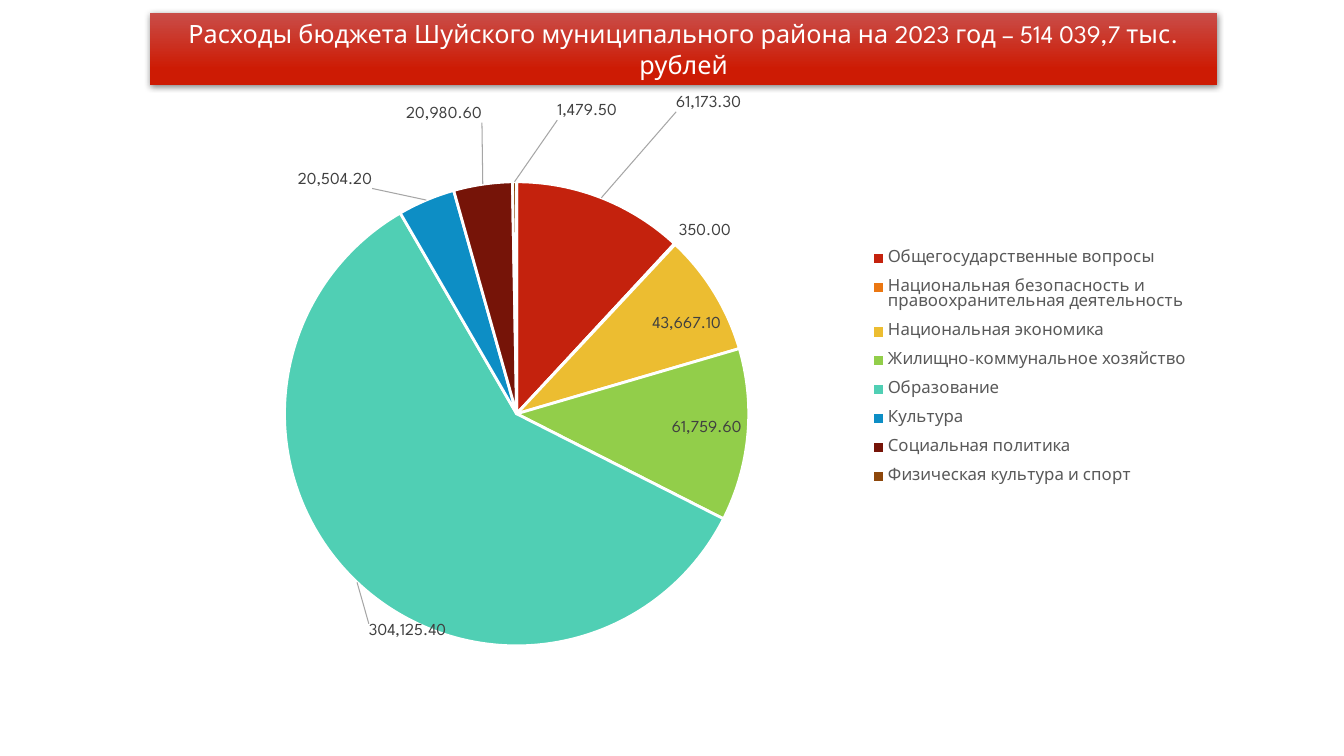
from lxml.etree import SubElement
from pptx import Presentation
from pptx.chart.data import CategoryChartData
from pptx.dml.color import RGBColor
from pptx.enum.chart import XL_CHART_TYPE, XL_LABEL_POSITION, XL_LEGEND_POSITION
from pptx.enum.text import MSO_ANCHOR, PP_ALIGN
from pptx.oxml import parse_xml
from pptx.oxml.ns import nsdecls, qn
from pptx.util import Inches, Pt

FONT = "League Spartan"
WHITE = RGBColor(0xFF, 0xFF, 0xFF)
BANNER_TOP = RGBColor(0xC9, 0x4D, 0x48)
BANNER_BOTTOM = RGBColor(0xCD, 0x1B, 0x04)
LABEL = RGBColor(0x40, 0x40, 0x40)
LEGEND = RGBColor(0x59, 0x59, 0x59)

TITLE = "Расходы бюджета Шуйского муниципального района на 2023 год – 514 039,7 тыс. рублей"
EXPENSES = [
    ("Общегосударственные вопросы", 61173.3, RGBColor(0xC4, 0x22, 0x0D)),
    ("Национальная безопасность и правоохранительная деятельность", 350, RGBColor(0xEB, 0x77, 0x12)),
    ("Национальная экономика", 43667.1, RGBColor(0xEC, 0xBD, 0x31)),
    ("Жилищно-коммунальное хозяйство", 61759.6, RGBColor(0x92, 0xCE, 0x4A)),
    ("Образование", 304125.4, RGBColor(0x50, 0xCF, 0xB4)),
    ("Культура", 20504.2, RGBColor(0x0D, 0x8E, 0xC5)),
    ("Социальная политика", 20980.6, RGBColor(0x76, 0x14, 0x08)),
    ("Физическая культура и спорт", 1479.5, RGBColor(0x8D, 0x47, 0x0B)),
]
LABEL_SHIFTS = {0: (0.07, -0.13), 4: (0.09, 0.06), 5: (-0.05, -0.01), 6: (0, -0.09), 7: (0.07, -0.09)}


def set_font(font, size, color):
    """Apply the slide typeface with a size and a colour."""
    font.name = FONT
    font.size = Pt(size)
    font.color.rgb = color


def manual_layout(**values):
    """Return a chart layout element holding the given settings in order."""
    layout = parse_xml(f"<c:layout {nsdecls('c')}/>")
    manual = SubElement(layout, qn("c:manualLayout"))
    for tag, value in values.items():
        SubElement(manual, qn(f"c:{tag}")).set("val", str(value))
    return layout


def add_banner(s, left, top, width, height):
    """Format the title placeholder as a red gradient banner."""
    sp = s.shapes.title
    sp.left, sp.top, sp.width, sp.height = map(Inches, (left, top, width, height))
    sp.fill.gradient()
    sp.fill.gradient_angle = 270
    stops = sp.fill.gradient_stops
    for stop, position, color in zip(stops, (0, 0.78), (BANNER_TOP, BANNER_BOTTOM)):
        stop.position = position
        stop.color.rgb = color
    sp.line.fill.background()
    sp._element.spPr.append(parse_xml(
        f'<a:effectLst {nsdecls("a")}><a:outerShdw blurRad="57150" dist="19050" dir="5400000" '
        'algn="ctr" rotWithShape="0"><a:srgbClr val="000000"><a:alpha val="48000"/></a:srgbClr>'
        '</a:outerShdw></a:effectLst>'))
    tf = sp.text_frame
    tf.text = TITLE
    tf.word_wrap = True
    tf.vertical_anchor = MSO_ANCHOR.MIDDLE
    p = tf.paragraphs[0]
    p.alignment = PP_ALIGN.CENTER
    set_font(p.font, 18, WHITE)


def format_labels(series):
    """Show the values and pull the labels of crowded slices away from the pie."""
    labels = series.data_labels
    labels.show_value = True
    labels.show_percentage = False
    labels.number_format = "#,##0.00"
    labels.number_format_is_linked = False
    labels.position = XL_LABEL_POSITION.BEST_FIT
    set_font(labels.font, 12, LABEL)
    for i, (dx, dy) in LABEL_SHIFTS.items():
        label = series.points[i].data_label
        set_font(label.font, 12, LABEL)
        label.position = XL_LABEL_POSITION.OUTSIDE_END
        label._dLbl.find(qn("c:idx")).addnext(manual_layout(x=dx, y=dy))
    dLbls = labels._element
    leader = dLbls.find(qn("c:showLeaderLines"))
    if leader is None:
        leader = SubElement(dLbls, qn("c:showLeaderLines"))
    leader.set("val", "1")
    leader.addnext(parse_xml(
        f'<c:leaderLines {nsdecls("c", "a")}><c:spPr><a:ln w="9525"><a:solidFill>'
        '<a:srgbClr val="A6A6A6"/></a:solidFill></a:ln></c:spPr></c:leaderLines>'))


def add_expense_pie(s, left, top, width, height):
    """Add the pie of expenses with its legend on the right."""
    data = CategoryChartData(number_format="#,##0.00")
    data.categories = [name for name, _, _ in EXPENSES]
    data.add_series("Series 1", [value for _, value, _ in EXPENSES])
    box = map(Inches, (left, top, width, height))
    chart = s.shapes.add_chart(XL_CHART_TYPE.PIE, *box, data).chart
    chart.has_title = False
    chart.font.name = FONT
    chart.font.size = Pt(10)
    plot = chart.plots[0]
    plot.vary_by_categories = True
    series = plot.series[0]
    for i, (_, _, color) in enumerate(EXPENSES):
        fmt = series.points[i].format
        fmt.fill.solid()
        fmt.fill.fore_color.rgb = color
        fmt.line.color.rgb = WHITE
        fmt.line.width = Pt(2)
    format_labels(series)

    chart.has_legend = True
    legend = chart.legend
    legend.position = XL_LEGEND_POSITION.BOTTOM
    legend.include_in_layout = False
    set_font(legend.font, 12, LEGEND)
    for old in legend._element.findall(qn("c:layout")):
        legend._element.remove(old)
    legend._element.find(qn("c:legendPos")).addnext(manual_layout(
        xMode="edge", yMode="edge", x=0.66, y=0.26, w=0.32, h=0.42))
    area = chart._chartSpace.chart.plotArea
    for old in area.findall(qn("c:layout")):
        area.remove(old)
    area.insert(0, manual_layout(
        layoutTarget="inner", xMode="edge", yMode="edge", x=0.05, y=0.17, w=0.55, h=0.75))


def main():
    """Build the budget expenses slide."""
    prs = Presentation()
    prs.slide_width, prs.slide_height = Inches(13.33), Inches(7.5)
    s = prs.slides.add_slide(prs.slide_layouts[5])
    add_banner(s, 1.49, 0.13, 10.58, 0.71)
    add_expense_pie(s, 1.78, 0.76, 10.29, 6.14)
    prs.save("out.pptx")


if __name__ == "__main__":
    main()
